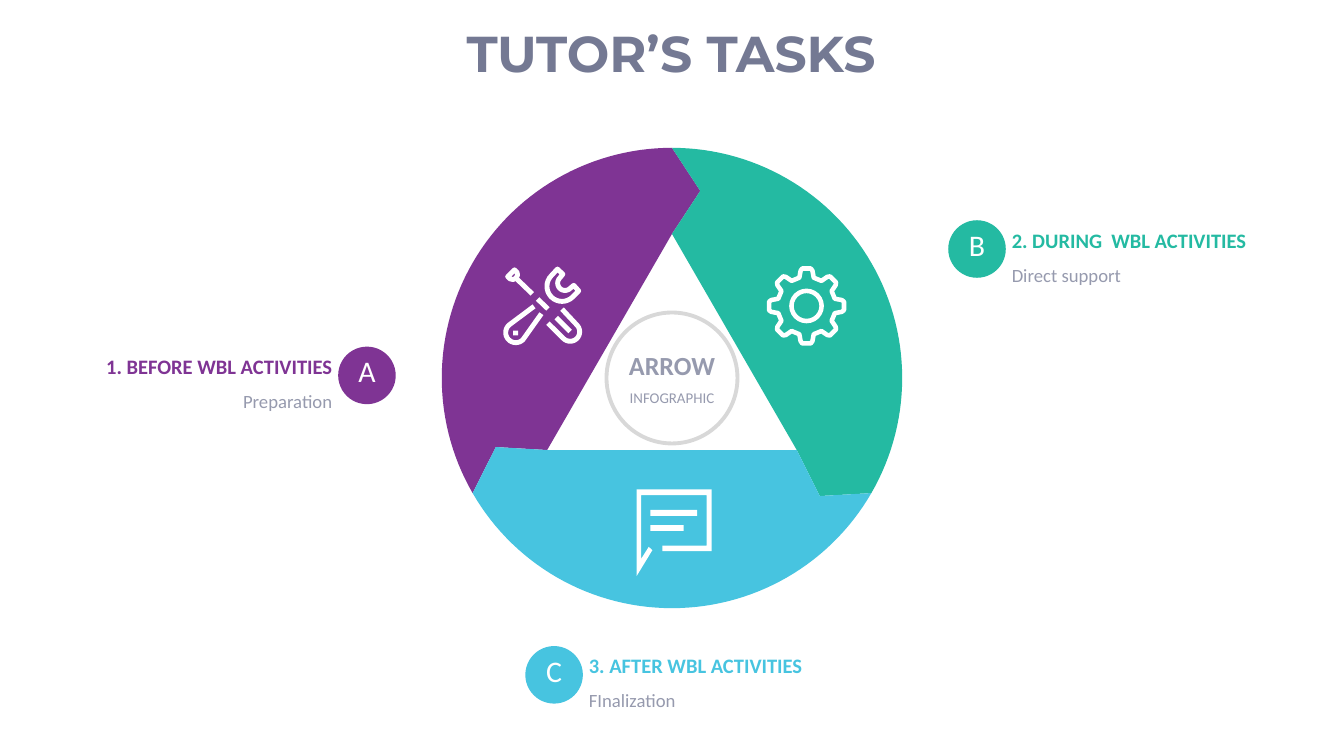
from dataclasses import dataclass
from math import cos, radians, sin

from pptx import Presentation
from pptx.dml.color import RGBColor
from pptx.enum.shapes import MSO_SHAPE
from pptx.enum.text import MSO_ANCHOR, MSO_AUTO_SIZE, PP_ALIGN as AL
from pptx.util import Cm, Pt


@dataclass(frozen=True)
class Theme:
    purple: str = "7F3494"
    green: str = "24BAA2"
    blue: str = "47C4E0"
    white: str = "FFFFFF"
    ring: str = "D8D8D8"
    title: str = "747993"
    grey: str = "969AAE"
    title_font: str = "Montserrat"
    font: str = "Calibri"
    title_size: float = 72
    badge_size: float = 42.7
    hub_size: float = 37.3
    head_size: float = 29.3
    body_size: float = 26.7
    small_size: float = 21.3


T = Theme()
SLIDE_W, SLIDE_H = 67.72, 38.1


def write(tf, text, size, color, *, bold=False, font=T.font, align=AL.LEFT,
          spacing=None, more=False):
    """Fill the first paragraph of a frame, or append one when more is set."""
    p = tf.add_paragraph() if more else tf.paragraphs[0]
    p.alignment = align
    if spacing:
        p.line_spacing = spacing
    r = p.add_run()
    r.text = text
    f = r.font
    f.name, f.size, f.bold = font, Pt(size), bold
    f.color.rgb = RGBColor.from_string(color)


def no_insets(tf):
    tf.margin_left = tf.margin_right = tf.margin_top = tf.margin_bottom = 0
    tf.word_wrap = True
    return tf


def text_frame(slide, x, y, w, h):
    return no_insets(slide.shapes.add_textbox(Cm(x), Cm(y), Cm(w), Cm(h)).text_frame)


def paint(sp, fill=None, line=None, width=0):
    sp.shadow.inherit = False
    for part, color in ((sp.fill, fill), (sp.line.fill, line)):
        if color:
            part.solid()
            part.fore_color.rgb = RGBColor.from_string(color)
        else:
            part.background()
    if line:
        sp.line.width = Pt(width)
    return sp


def preset(slide, kind, x, y, w, h, **look):
    return paint(slide.shapes.add_shape(kind, Cm(x), Cm(y), Cm(w), Cm(h)), **look)


def circle(slide, cx, cy, d, **look):
    return preset(slide, MSO_SHAPE.OVAL, cx - d / 2, cy - d / 2, d, d, **look)


def outline(slide, x, y, points, close=True, **look):
    """Draw a freeform whose points are relative to (x, y)."""
    first, *rest = [(Cm(x + px), Cm(y + py)) for px, py in points]
    fb = slide.shapes.build_freeform(*first)
    fb.add_line_segments(rest, close=close)
    return paint(fb.convert_to_shape(), **look)


def polar(r, angle, cx=0, cy=0):
    return cx + r * cos(radians(angle)), cy + r * sin(radians(angle))


def arc(r, start, end, cx=0, cy=0, steps=16):
    return [polar(r, start + (end - start) * i / steps, cx, cy)
            for i in range(steps + 1)]


def title(slide, text, x, y, w, h):
    sp = slide.shapes.title
    sp.left, sp.top, sp.width, sp.height = Cm(x), Cm(y), Cm(w), Cm(h)
    tf = no_insets(sp.text_frame)
    tf.auto_size = MSO_AUTO_SIZE.NONE
    tf.vertical_anchor = MSO_ANCHOR.MIDDLE
    write(tf, text, T.title_size, T.title, bold=True, font=T.title_font,
          align=AL.CENTER, spacing=0.9)


def arrow_wheel(slide, cx, cy, r, colors):
    """Interlocking arrows, each the previous one turned by an equal step."""
    step = 360 / len(colors)
    inner, tip, lead = 0.626 * r, 0.822 * r, 8.6
    for i, color in enumerate(colors):
        end = -90 + i * step
        start = end - step
        points = arc(r, start, end, steps=60) + [
            polar(tip, end + lead), polar(inner, end),
            polar(inner, start), polar(tip, start + lead)]
        outline(slide, cx, cy, points, fill=color)


def hub(slide, cx, cy, d):
    circle(slide, cx, cy, d, line=T.ring, width=5.5)
    left = cx - d / 2
    write(text_frame(slide, left, cy - 1.45, d, 1.6), "ARROW", T.hub_size, T.grey,
          bold=True, align=AL.CENTER)
    write(text_frame(slide, left, cy + 0.53, d, 0.91), "INFOGRAPHIC",
          T.small_size, T.grey, align=AL.CENTER)


def label(slide, x, y, letter, head, body, color, badge_right=False):
    """A 17.3 cm wide label: a lettered badge beside a heading and a detail."""
    w, d, text_w = 17.3, 2.9, 14.1
    align = AL.RIGHT if badge_right else AL.LEFT
    tf = text_frame(slide, x if badge_right else x + w - text_w, y, text_w, 3.4)
    write(tf, head, T.head_size, color, bold=True, align=align, spacing=1.5)
    write(tf, body, T.body_size, T.grey, align=align, spacing=1.5, more=True)
    badge_x = x + w - d / 2 if badge_right else x + d / 2
    badge = circle(slide, badge_x, y + 0.25 + d / 2, d, fill=color)
    tf = no_insets(badge.text_frame)
    tf.margin_bottom = Cm(0.46)
    tf.vertical_anchor = MSO_ANCHOR.MIDDLE
    write(tf, letter, T.badge_size, T.white, align=AL.CENTER)


def gear_icon(slide, cx, cy):
    tooth = [(1.47, -14.3), (1.8, -9.5), (1.9, -6.5),
             (1.9, 6.5), (1.8, 9.5), (1.47, 14.3)]
    points = [polar(r, 45 * i + a) for i in range(8) for r, a in tooth]
    outline(slide, cx, cy, points, line=T.white, width=6.5)
    circle(slide, cx, cy, 1.52, line=T.white, width=6.5)


def chat_icon(slide, x, y):
    bubble = [(0, 4.37), (0, 0), (3.78, 0), (3.78, 3.12), (1.3, 3.12),
              (1.3, 2.84), (3.53, 2.84), (3.53, 0.3), (0.23, 0.3),
              (0.23, 3.5), (0.61, 2.9), (0.79, 3.07)]
    outline(slide, x, y, bubble, fill=T.white)
    for dy, w in ((1.04, 2.36), (1.8, 1.68)):
        preset(slide, MSO_SHAPE.RECTANGLE, x + 0.69, y + dy, w, 0.3, fill=T.white)


def tools_icon(slide, x, y):
    blade = [(0.23, 0.58), (0.58, 0.24), (0.7, 0.36), (0.73, 0.5),
             (0.65, 0.66), (0.5, 0.73), (0.34, 0.69)]
    wrench_head = [(2.74, 0.2), *arc(0.76, 225, 45, 2.97, 1.07), (3.81, 1.3),
                   (3.56, 1.02), *arc(0.37, 45, 225, 3.12, 0.91), (3.01, 0.46)]
    shaft = [(0.66, 0.67), (1.47, 1.45)]
    neck = [(1.74, 1.71), (2.26, 2.21)]
    slot = [(2.68, 2.65), (3.38, 3.35)]
    driver_grip = [(2.26, 2.93), *arc(0.48, 135, -45, 3.38, 3.36), (2.97, 2.22)]
    wrench_grip = [(1.56, 2.08), *arc(0.51, 230, 45, 0.64, 3.4), (1.93, 2.45)]
    for points in (blade, wrench_head):
        outline(slide, x, y, points, line=T.white, width=7)
    for points in (shaft, neck, slot, driver_grip, wrench_grip):
        outline(slide, x, y, points, close=False, line=T.white, width=7)
    preset(slide, MSO_SHAPE.RECTANGLE, x + 0.51, y + 3.3, 0.25, 0.25, fill=T.white)


def main():
    prs = Presentation()
    prs.slide_width, prs.slide_height = Cm(SLIDE_W), Cm(SLIDE_H)
    slide = prs.slides.add_slide(prs.slide_layouts[5])
    cx, cy = SLIDE_W / 2, SLIDE_H / 2

    title(slide, "TUTOR’S TASKS", 2.82, 1, 61.98, 3.66)
    arrow_wheel(slide, cx, cy, 11.6, (T.purple, T.green, T.blue))
    hub(slide, cx, cy, 6.6)
    tools_icon(slide, cx - 8.51, cy - 5.69)
    gear_icon(slide, cx + 6.78, cy - 3.63)
    chat_icon(slide, cx - 1.78, cy + 5.61)
    label(slide, 2.64, 17.22, "A", "1. BEFORE WBL ACTIVITIES", "Preparation",
          T.purple, badge_right=True)
    label(slide, 47.78, 10.85, "B", "2. DURING  WBL ACTIVITIES", "Direct support",
          T.green)
    label(slide, 26.47, 32.31, "C", "3. AFTER WBL ACTIVITIES", "FInalization",
          T.blue)
    prs.save("out.pptx")


if __name__ == "__main__":
    main()
